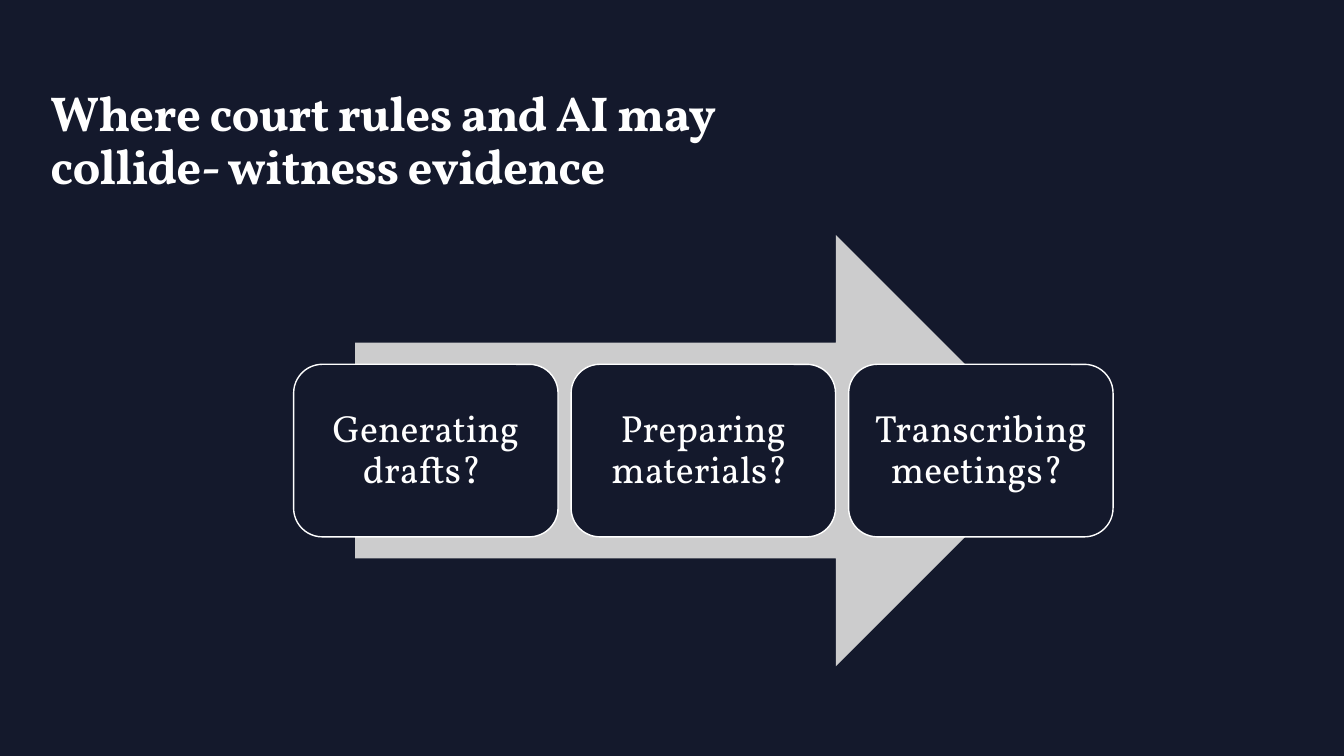
from pptx import Presentation
from pptx.dml.color import RGBColor
from pptx.enum.shapes import MSO_SHAPE
from pptx.enum.text import MSO_ANCHOR, PP_ALIGN
from pptx.util import Cm, Pt

NAVY, WHITE, GREY = "14192C", "FFFFFF", "CCCCCD"
FONT = "Vollkorn"
TITLE = "Where court rules and AI may collide- witness evidence"
STEPS = ["Generating drafts? ", "Preparing materials? ", "Transcribing meetings? "]


def color(hex_string):
    return RGBColor.from_string(hex_string)


def write(text_frame, text, size, inset=0, bold=False, align=PP_ALIGN.LEFT):
    text_frame.word_wrap = True
    text_frame.margin_left = text_frame.margin_right = Cm(inset)
    text_frame.margin_top = text_frame.margin_bottom = Cm(inset)
    text_frame.text = text
    paragraph = text_frame.paragraphs[0]
    paragraph.alignment = align
    paragraph.line_spacing = 0.9
    font = paragraph.runs[0].font
    font.name, font.size, font.bold = FONT, Pt(size), bold
    font.color.rgb = color(WHITE)
    return font


def add_filled(slide, preset, left, top, width, height, fill):
    shape = slide.shapes.add_shape(preset, Cm(left), Cm(top), Cm(width), Cm(height))
    shape.shadow.inherit = False
    shape.fill.solid()
    shape.fill.fore_color.rgb = color(fill)
    shape.line.fill.background()
    return shape


def add_title(slide, left, top, width, height):
    box = slide.shapes.add_textbox(Cm(left), Cm(top), Cm(width), Cm(height))
    font = write(box.text_frame, TITLE, 35, bold=True)
    # Letter spacing in hundredths of a point
    font._element.set("spc", "-50")


def add_process(slide, left, top, width, height, gap=0.33):
    # Arrow behind the steps, centred at 85% of the width
    add_filled(slide, MSO_SHAPE.RIGHT_ARROW, left + 0.075 * width, top,
               0.85 * width, height, GREY)

    # Equal step tiles across the middle 40% of the height
    tile_width = (width - gap * (len(STEPS) - 1)) / len(STEPS)
    for index, step in enumerate(STEPS):
        tile = add_filled(slide, MSO_SHAPE.ROUNDED_RECTANGLE,
                          left + index * (tile_width + gap), top + 0.3 * height,
                          tile_width, 0.4 * height, NAVY)
        tile.line.color.rgb = color(WHITE)
        tile.line.width = Pt(1)
        tile.text_frame.vertical_anchor = MSO_ANCHOR.MIDDLE
        write(tile.text_frame, step, 27, inset=0.25, align=PP_ALIGN.CENTER)


def main():
    presentation = Presentation()
    presentation.slide_width, presentation.slide_height = Cm(33.87), Cm(19.05)
    slide = presentation.slides.add_slide(presentation.slide_layouts[6])
    slide.background.fill.solid()
    slide.background.fill.fore_color.rgb = color(NAVY)
    add_title(slide, 1.27, 2.24, 20.68, 15.57)
    add_process(slide, 7.4, 5.92, 20.65, 10.87)
    presentation.save("out.pptx")


if __name__ == "__main__":
    main()
